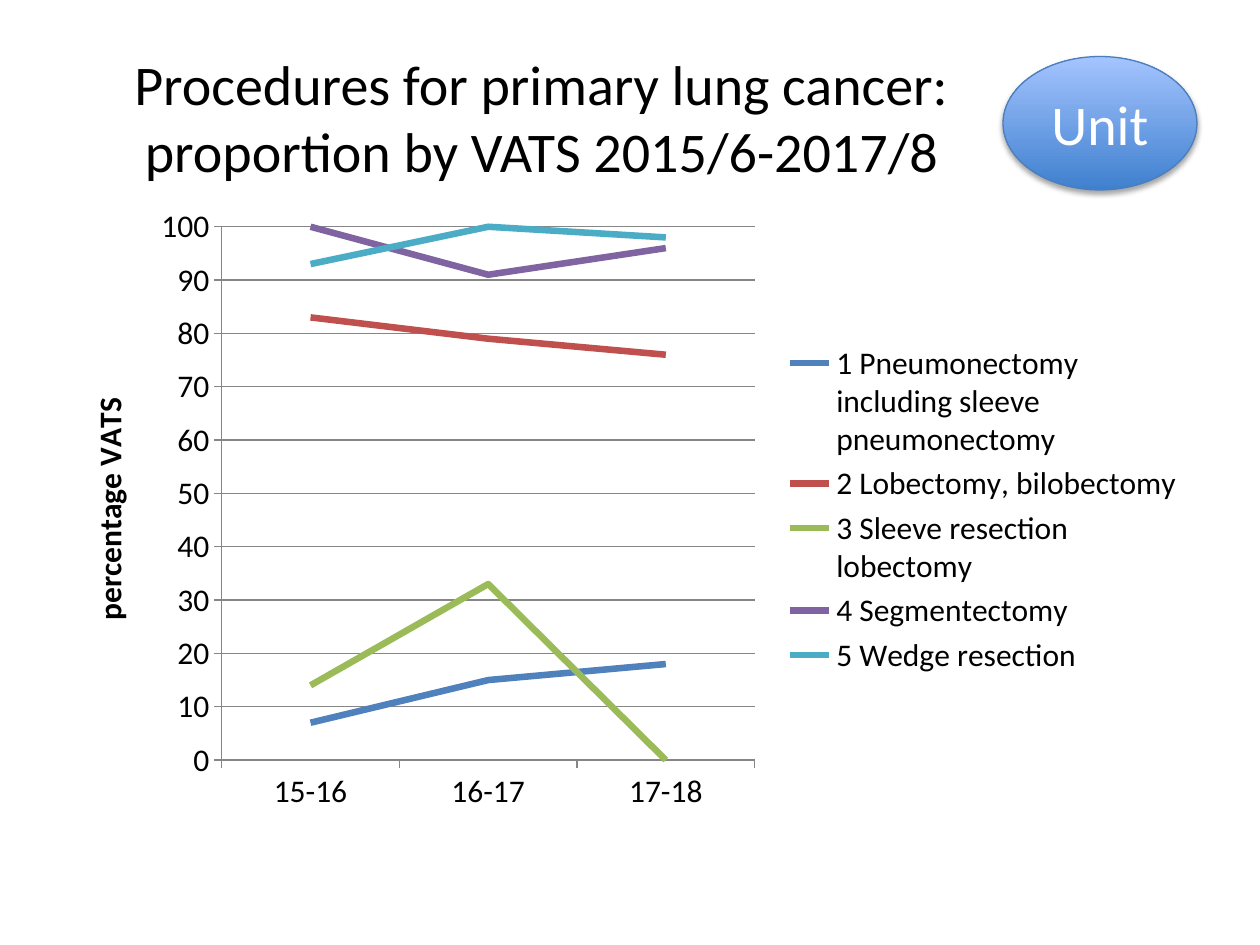
from lxml import etree
from pptx import Presentation
from pptx.chart.data import CategoryChartData
from pptx.dml.color import RGBColor
from pptx.enum.chart import XL_CHART_TYPE, XL_LEGEND_POSITION, XL_TICK_MARK
from pptx.enum.shapes import MSO_SHAPE
from pptx.enum.text import MSO_ANCHOR, PP_ALIGN
from pptx.oxml import parse_xml
from pptx.oxml.ns import nsdecls, qn
from pptx.util import Cm, Pt

LINE = XL_CHART_TYPE.LINE
RIGHT = XL_LEGEND_POSITION.RIGHT
OUTSIDE, NO_TICK = XL_TICK_MARK.OUTSIDE, XL_TICK_MARK.NONE
MIDDLE, CENTER = MSO_ANCHOR.MIDDLE, PP_ALIGN.CENTER
OVAL = MSO_SHAPE.OVAL
FONT = "Calibri"
COLORS = {
    "text": "000000",
    "white": "FFFFFF",
    "axis": "868686",
    "badge_bottom": "3F80CE",
    "badge_top": "A4C4FF",
    "badge_line": "4B7EBC",
}
PROCEDURES = [
    ("1 Pneumonectomy including sleeve pneumonectomy", (7, 15, 18), "4F81BD"),
    ("2 Lobectomy, bilobectomy", (83, 79, 76), "C0504D"),
    ("3 Sleeve resection lobectomy", (14, 33, 0), "9BBB59"),
    ("4 Segmentectomy", (100, 91, 96), "8064A2"),
    ("5 Wedge resection", (93, 100, 98), "4BACC6"),
]
PLOT_AREA = {"x": 0.14, "y": 0.05, "w": 0.47, "h": 0.85}


def set_font(font, size, color):
    font.name = FONT
    font.size = Pt(size)
    font.color.rgb = RGBColor.from_string(COLORS[color])


def set_text(shape, text, color):
    frame = shape.text_frame
    frame.text = text
    frame.word_wrap = True
    frame.vertical_anchor = MIDDLE
    para = frame.paragraphs[0]
    para.alignment = CENTER
    set_font(para.runs[0].font, 32, color)


deck = Presentation()
deck.slide_width, deck.slide_height = Cm(25.4), Cm(19.05)
page = deck.slides.add_slide(deck.slide_layouts[5])

title = page.shapes.title
title.left, title.top, title.width, title.height = Cm(1.27), Cm(0.76), Cm(19.3), Cm(3.18)
set_text(title, "Procedures for primary lung cancer: proportion by VATS 2015/6-2017/8", "text")

data = CategoryChartData()
data.categories = ["15-16", "16-17", "17-18"]
for name, values, color in PROCEDURES:
    data.add_series(name, values)
chart = page.shapes.add_chart(LINE, Cm(1.27), Cm(3.94), Cm(22.86), Cm(12.65), data).chart
chart.has_title = False
set_font(chart.font, 18, "text")
chart.has_legend = True
chart.legend.position = RIGHT
chart.legend.include_in_layout = False
set_font(chart.legend.font, 18, "text")

plot = chart.plots[0]
plot.vary_by_categories = False
for series, (name, values, color) in zip(plot.series, PROCEDURES):
    series.smooth = False
    series.format.line.width = Pt(3.75)
    series.format.line.color.rgb = RGBColor.from_string(color)

value_axis, category_axis = chart.value_axis, chart.category_axis
value_axis.minimum_scale, value_axis.maximum_scale = 0, 100
value_axis.major_unit = 10
value_axis.has_major_gridlines = True
for axis in (value_axis, category_axis):
    axis.major_tick_mark = OUTSIDE
    axis.minor_tick_mark = NO_TICK
    set_font(axis.tick_labels.font, 18, "text")
for lines in (value_axis, category_axis, value_axis.major_gridlines):
    lines.format.line.width = Pt(0.75)
    lines.format.line.color.rgb = RGBColor.from_string(COLORS["axis"])
axis_title = value_axis.axis_title.text_frame
axis_title.text = "percentage VATS"
span = axis_title.paragraphs[0].runs[0]
set_font(span.font, 18, "text")
span.font.bold = True

plot_area = chart.element.find(".//" + qn("c:plotArea"))
for old_layout in plot_area.findall(qn("c:layout")):
    plot_area.remove(old_layout)
layout = parse_xml(f"<c:layout {nsdecls('c')}><c:manualLayout/></c:layout>")
settings = {"layoutTarget": "inner", "xMode": "edge", "yMode": "edge", **PLOT_AREA}
for tag, value in settings.items():
    etree.SubElement(layout[0], qn(f"c:{tag}")).set("val", str(value))
plot_area.insert(0, layout)

badge = page.shapes.add_shape(OVAL, Cm(20.22), Cm(1.14), Cm(3.91), Cm(2.69))
badge.fill.gradient()
badge.fill.gradient_angle = 90
for stop, color in zip(badge.fill.gradient_stops, ("badge_bottom", "badge_top")):
    stop.color.rgb = RGBColor.from_string(COLORS[color])
badge.line.color.rgb = RGBColor.from_string(COLORS["badge_line"])
badge.line.width = Pt(0.75)
badge.shadow.inherit = False
effects = badge.element.spPr.find(qn("a:effectLst"))
effects.append(parse_xml(
    f'<a:outerShdw {nsdecls("a")} blurRad="{Pt(3.1)}" dist="{Pt(1.8)}" dir="5400000" rotWithShape="0">'
    f'<a:srgbClr val="{COLORS["text"]}"><a:alpha val="35000"/></a:srgbClr></a:outerShdw>'
))
set_text(badge, "Unit", "white")

deck.save("out.pptx")
